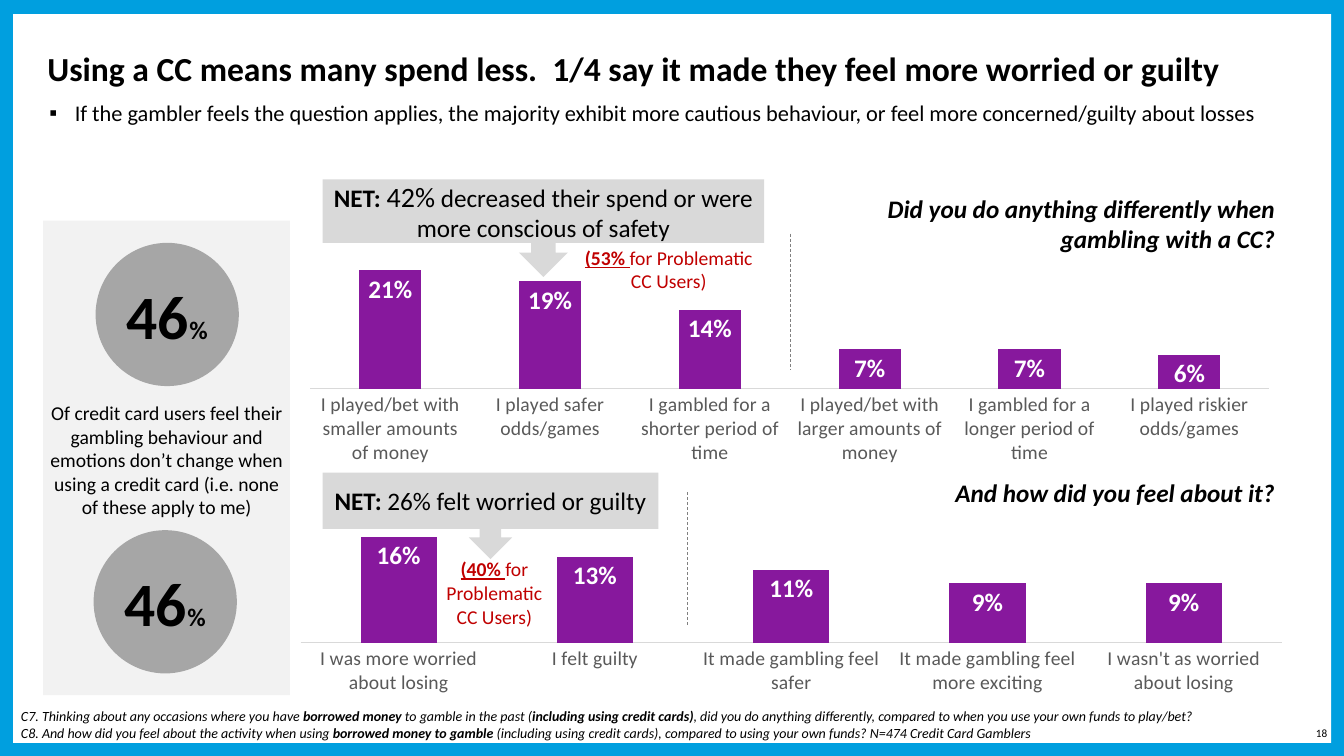
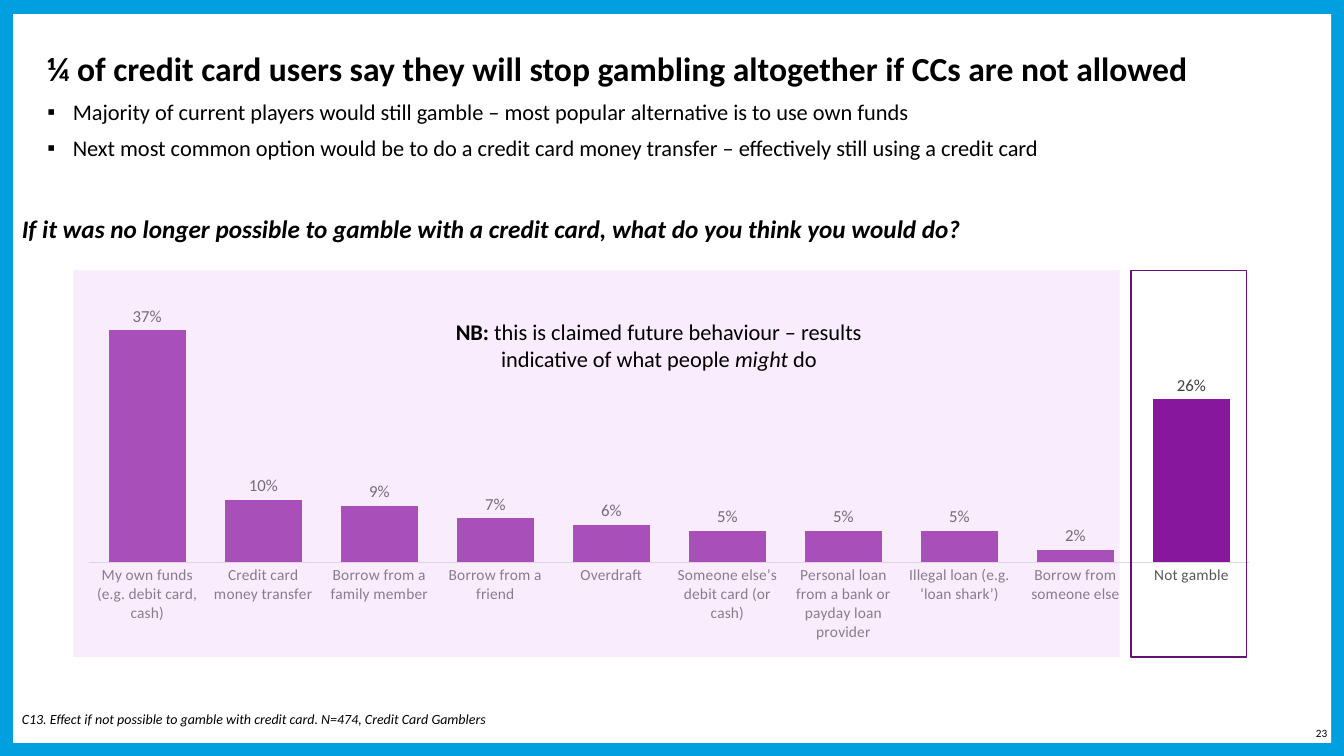
from dataclasses import dataclass
from lxml.etree import SubElement, Element
from pptx import Presentation
from pptx.chart.data import CategoryChartData
from pptx.dml.color import RGBColor
from pptx.enum.chart import XL_CHART_TYPE as ChartType, XL_LABEL_POSITION as LabelAt, XL_TICK_MARK as Tick
from pptx.enum.dml import MSO_LINE as Dash
from pptx.enum.shapes import MSO_CONNECTOR as Connector, MSO_SHAPE as Preset
from pptx.enum.text import MSO_ANCHOR as Anchor, MSO_AUTO_SIZE as AutoSize, PP_ALIGN as Align
from pptx.oxml.ns import qn
from pptx.util import Cm, Pt


@dataclass(frozen=True)
class Theme:
    """Colours and type sizes shared by every slide."""
    font: str = "Calibri"
    ink: str = "000000"
    paper: str = "FFFFFF"
    border: str = "009FDF"
    bar: str = "87189D"
    outline: str = "641274"
    shade: str = "EEC6F6"
    alert: str = "C00000"
    panel: str = "F2F2F2"
    callout: str = "D9D9D9"
    disc: str = "A6A6A6"
    divider: str = "808080"
    axis_text: str = "595959"
    label_text: str = "404040"
    title: int = 24
    bullet: int = 16
    question: int = 18
    net: int = 18
    net_figure: int = 20
    small: int = 14
    figure: int = 44
    footnote: int = 10
    page: int = 8
    axis_small: int = 11
    label_small: int = 12


def rgb(code):
    """Turn a hex code into a colour."""
    return RGBColor.from_string(code)


def style_font(font, *, size, color, name=Theme.font, bold=False, italic=False, underline=False):
    """Apply one type style to a font."""
    font.name, font.size, font.color.rgb = name, Pt(size), rgb(color)
    font.bold, font.italic, font.underline = bold, italic, underline


def write(frame, *paragraphs, align=Align.LEFT, bullet=None, spacing=None, **style):
    """Fill a frame with paragraphs of plain strings or (text, style) pieces."""
    for index, pieces in enumerate(paragraphs):
        paragraph = frame.paragraphs[0] if index == 0 else frame.add_paragraph()
        paragraph.alignment = align
        if spacing:
            paragraph.line_spacing = spacing
        if bullet:
            paragraph.space_before = Pt(5 if index else 0)
            paragraph.space_after = Pt(4)
            properties = paragraph._p.get_or_add_pPr()
            properties.set("marL", str(Cm(0.64)))
            properties.set("indent", str(-Cm(0.64)))
            SubElement(properties, qn("a:buFont")).set("typeface", "Arial")
            SubElement(properties, qn("a:buChar")).set("char", bullet)
        for piece in [pieces] if isinstance(pieces, str) else pieces:
            text, change = (piece, {}) if isinstance(piece, str) else piece
            run = paragraph.add_run()
            run.text = text
            style_font(run.font, **{**style, **change})


class Deck:
    """Holds the theme and the current slide, with one method per element."""

    def __init__(self, theme):
        self.theme = theme
        self.file = Presentation()
        self.file.slide_width, self.file.slide_height = Cm(33.87), Cm(19.05)
        self.slide = None

    def start(self, page, title, title_size, bullets, bullets_box):
        theme = self.theme
        self.slide = self.file.slides.add_slide(self.file.slide_layouts[1])
        heading, listing = self.slide.placeholders
        border = self.shape(Preset.RECTANGLE, (0, 0, 33.87, 19.05), fill=theme.border)
        paper = self.shape(Preset.RECTANGLE, (0.33, 0.36, 33.22, 18.36), fill=theme.paper)
        for depth, part in enumerate((border, paper), start=2):
            self.slide.shapes._spTree.insert(depth, part._element)
        self.text((32.84, 18.21, 0.86, 0.51), str(page), wrap=False, anchor=Anchor.MIDDLE,
                  size=theme.page, align=Align.RIGHT)
        self.placeholder(heading, (0.94, 1.19, *title_size), title,
                         size=theme.title, bold=True, spacing=0.9)
        self.placeholder(listing, bullets_box, *bullets, size=theme.bullet, bullet="▪", spacing=0.9)

    def placeholder(self, holder, box, *paragraphs, **style):
        holder.left, holder.top, holder.width, holder.height = map(Cm, box)
        holder.text_frame.auto_size = AutoSize.NONE
        holder.text_frame.vertical_anchor = Anchor.TOP
        write(holder.text_frame, *paragraphs, color=self.theme.ink, **style)

    def text(self, box, *paragraphs, wrap=True, anchor=Anchor.TOP, color=None, **style):
        frame = self.slide.shapes.add_textbox(*map(Cm, box)).text_frame
        frame.word_wrap, frame.vertical_anchor = wrap, anchor
        write(frame, *paragraphs, color=color or self.theme.ink, **style)

    def shape(self, preset, box, *paragraphs, fill=None, alpha=None, line=None, **style):
        shape = self.slide.shapes.add_shape(preset, *map(Cm, box))
        shape.shadow.inherit = False
        if fill:
            shape.fill.solid()
            shape.fill.fore_color.rgb = rgb(fill)
        else:
            shape.fill.background()
        if alpha:
            color = shape._element.spPr.find(qn("a:solidFill"))[0]
            SubElement(color, qn("a:alpha")).set("val", str(alpha * 1000))
        if line:
            shape.line.color.rgb, shape.line.width = rgb(line), Pt(1)
        else:
            shape.line.fill.background()
        if paragraphs:
            shape.text_frame.vertical_anchor = Anchor.MIDDLE
            write(shape.text_frame, *paragraphs, color=self.theme.ink, align=Align.CENTER, **style)
        return shape

    def disc(self, left, top, figure):
        self.shape(Preset.OVAL, (left, top, 3.61, 3.61),
                   [figure, ("%", dict(size=self.theme.net))],
                   fill=self.theme.disc, size=self.theme.figure, bold=True)

    def net_callout(self, box, *pieces):
        self.shape(Preset.DOWN_ARROW_CALLOUT, box, [("NET: ", dict(bold=True)), *pieces],
                   fill=self.theme.callout, size=self.theme.net)

    def problem_share(self, box, share):
        self.text(box, [(f"({share} ", dict(bold=True, underline=True)), "for Problematic CC Users)"],
                  size=self.theme.small, color=self.theme.alert, align=Align.CENTER)

    def question(self, box, wording, align=Align.RIGHT):
        self.text(box, wording, size=self.theme.question, bold=True, italic=True, align=align)

    def footnote(self, box, *paragraphs):
        self.text(box, *paragraphs, size=self.theme.footnote, italic=True)

    def divider(self, x, top, bottom):
        divider = self.slide.shapes.add_connector(Connector.STRAIGHT, Cm(x), Cm(top), Cm(x), Cm(bottom))
        divider.line.color.rgb, divider.line.width = rgb(self.theme.divider), Pt(0.5)
        divider.line.dash_style = Dash.DASH
        SubElement(divider._element.spPr, qn("a:effectLst"))

    def columns(self, box, shares, *, top, gap, axis_size, label_at, label_style, plot_area=None):
        data = CategoryChartData(number_format="0%")
        data.categories = list(shares)
        data.add_series("Series 1", list(shares.values()))
        chart = self.slide.shapes.add_chart(ChartType.COLUMN_CLUSTERED, *map(Cm, box), data).chart
        chart.has_title = chart.has_legend = False
        style_font(chart.font, size=10, color=self.theme.ink)

        values = chart.value_axis
        values.visible = values.has_major_gridlines = False
        values.minimum_scale, values.maximum_scale = 0, top

        answers = chart.category_axis
        answers.major_tick_mark = answers.minor_tick_mark = Tick.NONE
        answers.format.line.color.rgb = rgb(self.theme.callout)
        answers.format.line.width = Pt(0.75)
        style_font(answers.tick_labels.font, size=axis_size, color=self.theme.axis_text)

        plot = chart.plots[0]
        plot.gap_width, plot.overlap, plot.vary_by_categories = gap, -27, False
        bars = plot.series[0].format.fill
        bars.solid()
        bars.fore_color.rgb = rgb(self.theme.bar)

        plot.has_data_labels = True
        labels = plot.data_labels
        labels.show_value, labels.position = True, label_at
        labels.number_format, labels.number_format_is_linked = "0%", False
        style_font(labels.font, **label_style)
        if plot_area:
            self.place_plot(chart, plot_area)

    def place_plot(self, chart, plot_area):
        area = chart._chartSpace.chart.plotArea
        for automatic in area.findall(qn("c:layout")):
            area.remove(automatic)
        layout = Element(qn("c:layout"))
        area.insert(0, layout)
        manual = SubElement(layout, qn("c:manualLayout"))
        settings = dict(layoutTarget="inner", xMode="edge", yMode="edge", **dict(zip("xywh", plot_area)))
        for tag, value in settings.items():
            SubElement(manual, qn(f"c:{tag}")).set("val", str(value))


def spending_slide(deck):
    """Build the slide on how card use changes behaviour and feelings."""
    theme = deck.theme
    deck.start(18, "Using a CC means many spend less.  1/4 say it made they feel more worried or guilty",
               (31.45, 1.17),
               ["If the gambler feels the question applies, the majority exhibit more cautious behaviour, "
                "or feel more concerned/guilty about losses"], (0.99, 2.44, 31.9, 0.86))
    chart_style = dict(top=0.25, gap=157, axis_size=theme.small, label_at=LabelAt.INSIDE_END,
                       label_style=dict(size=theme.net, color=theme.paper, bold=True))
    behaviour = {
        "I played/bet with smaller amounts of money": 0.21,
        "I played safer odds/games": 0.19,
        "I gambled for a shorter period of time": 0.14,
        "I played/bet with larger amounts of money": 0.07,
        "I gambled for a longer period of time": 0.07,
        "I played riskier odds/games": 0.06,
    }
    feelings = {
        "I was more worried about losing": 0.16,
        "I felt guilty": 0.13,
        "It made gambling feel safer": 0.11,
        "It made gambling feel more exciting": 0.09,
        "I wasn't as worried about losing": 0.09,
    }
    deck.columns((7.32, 6.12, 25.17, 5.72), behaviour, **chart_style)
    deck.shape(Preset.RECTANGLE, (1.09, 5.56, 6.22, 11.96), fill=theme.panel)
    deck.disc(2.41, 6.12, "46")
    deck.text((0.99, 9.98, 6.43, 3.25),
              "Of credit card users feel their gambling behaviour and emotions don’t change when "
              "using a credit card (i.e. none of these apply to me)",
              size=theme.small, align=Align.CENTER)
    deck.disc(2.36, 13.36, "46")
    deck.columns((7.06, 11.91, 25.76, 5.72), feelings, **chart_style)

    deck.net_callout((8.13, 4.52, 11.13, 2.46), ("42%", dict(size=theme.net_figure)),
                     " decreased their spend or were more conscious of safety")
    deck.net_callout((8.13, 11.91, 8.46, 2.18), "26% felt worried or guilty")
    deck.question((20.62, 4.75, 11.76, 1.8), "Did you do anything differently when gambling with a CC?")
    deck.question((20.62, 11.91, 11.76, 1.02), "And how did you feel about it?")
    deck.divider(19.91, 5.89, 9.3)
    deck.divider(17.32, 12.4, 15.8)
    deck.problem_share((14.43, 6.07, 4.85, 1.45), "53%")
    deck.problem_share((10.9, 13.92, 3.12, 2.06), "40%")
    strong = dict(bold=True)
    deck.footnote((0.28, 17.7, 30.51, 1.14),
                  ["C7. Thinking about any occasions where you have ", ("borrowed money", strong),
                   " to gamble in the past (", ("including using credit cards)", strong),
                   ", did you do anything differently, compared to when you use your own funds to play/bet?"],
                  ["C8. And how did you feel about the activity when using ",
                   ("borrowed money to gamble", strong),
                   " (including using credit cards), compared to using your own funds? "
                   "N=474 Credit Card Gamblers"])


def alternatives_slide(deck):
    """Build the slide on what gamblers would do without credit cards."""
    theme = deck.theme
    deck.start(23, "¼ of credit card users say they will stop gambling altogether if CCs are not allowed",
               (29.34, 2.11),
               ["Majority of current players would still gamble – most popular alternative is to use own funds",
                "Next most common option would be to do a credit card money transfer – "
                "effectively still using a credit card"], (0.94, 2.41, 32.08, 1.8))
    alternatives = {
        "My own funds (e.g. debit card, cash)": 0.37,
        "Credit card money transfer": 0.1,
        "Borrow from a family member": 0.09,
        "Borrow from a friend": 0.07,
        "Overdraft": 0.06,
        "Someone else’s debit card (or cash)": 0.05,
        "Personal loan from a bank or payday loan provider": 0.05,
        "Illegal loan (e.g. ‘loan shark’)": 0.05,
        "Borrow from someone else": 0.02,
        "Not gamble": 0.26,
    }
    deck.columns((0.3, 5.26, 32.49, 11.28), alternatives, top=0.5, gap=50,
                 axis_size=theme.axis_small, label_at=LabelAt.OUTSIDE_END,
                 label_style=dict(size=theme.label_small, color=theme.label_text),
                 plot_area=(0.06, 0.09, 0.9, 0.7))
    deck.shape(Preset.RECTANGLE, (1.85, 6.81, 26.37, 9.75), fill=theme.shade, alpha=32)
    deck.shape(Preset.RECTANGLE, (28.5, 6.81, 2.92, 9.75), line=theme.outline)
    deck.footnote((0.3, 17.78, 19.61, 0.69),
                  "C13. Effect if not possible to gamble with credit card. N=474, Credit Card Gamblers")
    deck.question((0.3, 5.26, 26.37, 1.02),
                  "If it was no longer possible to gamble with a credit card, what do you think you would do?",
                  align=Align.LEFT)
    deck.text((10.74, 7.9, 11.73, 1.63),
              [("NB: ", dict(bold=True)),
               "this is claimed future behaviour – results indicative of what people ",
               ("might ", dict(italic=True)), "do"],
              size=theme.bullet, align=Align.CENTER)


def main():
    """Build and save both slides."""
    deck = Deck(Theme())
    spending_slide(deck)
    alternatives_slide(deck)
    deck.file.save("out.pptx")


if __name__ == "__main__":
    main()
